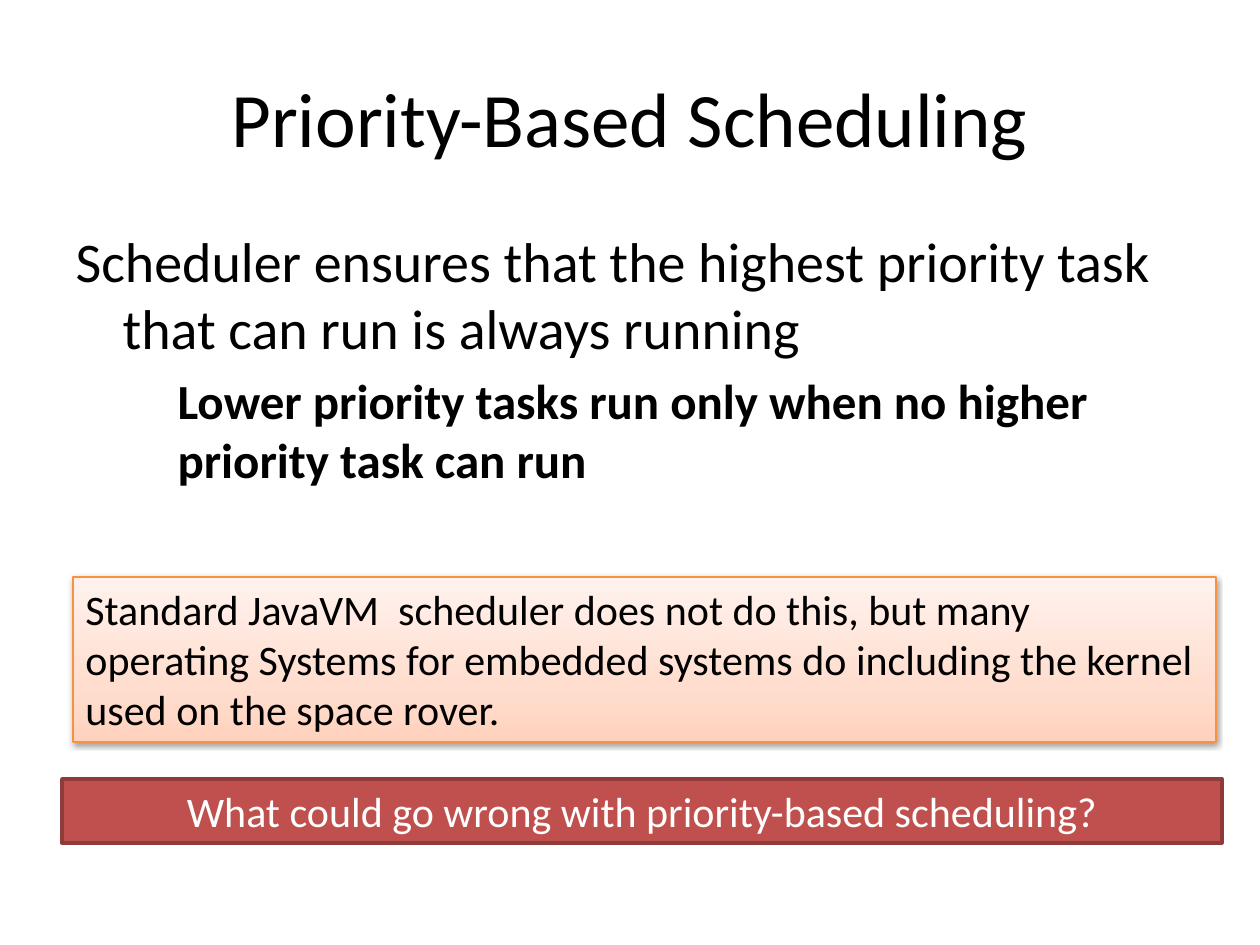
from dataclasses import dataclass

from lxml.etree import SubElement
from pptx import Presentation
from pptx.dml.color import RGBColor
from pptx.enum.shapes import MSO_SHAPE
from pptx.enum.text import MSO_ANCHOR, PP_ALIGN as Align
from pptx.oxml.ns import qn
from pptx.util import Pt

EMU_PER_PX = 914400 / 126


@dataclass(frozen=True)
class Theme:
    font: str = "Calibri"
    text: str = "000000"
    light_text: str = "FFFFFF"
    question_fill: str = "C0504D"
    question_line: str = "8E3B39"
    note_line: str = "F69240"
    note_stops: tuple = ((0, "FFD2BD"), (35, "FFDED0"), (100, "FFF2ED"))
    shadow: str = "000000"
    title_size: int = 44
    body_size: int = 32
    detail_size: int = 28
    box_size: int = 24


THEME = Theme()


def px(value):
    return round(value * EMU_PER_PX)


def rgb(value):
    return RGBColor.from_string(value)


def place(shape, left, top, width, height):
    shape.left, shape.top = px(left), px(top)
    shape.width, shape.height = px(width), px(height)


def add_text(paragraph, text, size, color=THEME.text, bold=False):
    run = paragraph.add_run()
    run.text = text
    run.font.name = THEME.font
    run.font.size = Pt(size)
    run.font.bold = bold
    run.font.color.rgb = rgb(color)


def set_hanging(paragraph, margin, indent):
    properties = paragraph._p.get_or_add_pPr()
    properties.set("marL", str(px(margin)))
    properties.set("indent", str(px(indent)))
    SubElement(properties, qn("a:buNone"))


def add_title(slide, text):
    title = slide.shapes.title
    place(title, 63, 38, 1134, 157)
    title.text_frame.vertical_anchor = MSO_ANCHOR.MIDDLE
    paragraph = title.text_frame.paragraphs[0]
    paragraph.alignment = Align.CENTER
    add_text(paragraph, text, THEME.title_size)


def add_body(slide, statement, detail):
    body = slide.placeholders[1]
    place(body, 63, 220, 1134, 624)
    frame = body.text_frame
    first = frame.paragraphs[0]
    set_hanging(first, 47, -47)
    add_text(first, statement, THEME.body_size)
    second = frame.add_paragraph()
    second.level = 1
    set_hanging(second, 102, 0)
    add_text(second, detail, THEME.detail_size, bold=True)


def add_box(slide, bounds, text, alignment, text_color, line_color, line_width):
    box = slide.shapes.add_shape(MSO_SHAPE.RECTANGLE, *map(px, bounds))
    box.shadow.inherit = False
    box.line.color.rgb = rgb(line_color)
    box.line.width = Pt(line_width)
    frame = box.text_frame
    frame.word_wrap = True
    frame.vertical_anchor = MSO_ANCHOR.TOP
    paragraph = frame.paragraphs[0]
    paragraph.alignment = alignment
    add_text(paragraph, text, THEME.box_size, text_color)
    return box


def fill_gradient(shape, stops, angle):
    shape.fill.gradient()
    shape.fill.gradient_angle = angle
    stop_list = shape._element.spPr.find(qn("a:gradFill")).find(qn("a:gsLst"))
    for stop in list(stop_list):
        stop_list.remove(stop)
    for position, color in stops:
        stop = SubElement(stop_list, qn("a:gs"), pos=str(position * 1000))
        SubElement(stop, qn("a:srgbClr"), val=color)


def add_shadow(shape, blur, distance, opacity):
    effects = shape._element.spPr.find(qn("a:effectLst"))
    shadow = SubElement(
        effects, qn("a:outerShdw"), blurRad=str(Pt(blur)), dist=str(Pt(distance)),
        dir="5400000", rotWithShape="0")
    color = SubElement(shadow, qn("a:srgbClr"), val=THEME.shadow)
    SubElement(color, qn("a:alpha"), val=str(opacity * 1000))


def add_note(slide, text):
    note = add_box(slide, (73, 577, 1143, 165), text, Align.LEFT,
                   THEME.text, THEME.note_line, 0.75)
    fill_gradient(note, THEME.note_stops, 90)
    add_shadow(note, 3.1, 1.6, 38)


def add_question(slide, text):
    question = add_box(slide, (62, 779, 1160, 64), text, Align.CENTER,
                       THEME.light_text, THEME.question_line, 2)
    question.fill.solid()
    question.fill.fore_color.rgb = rgb(THEME.question_fill)


def main():
    presentation = Presentation()
    presentation.slide_width, presentation.slide_height = px(1260), px(945)
    slide = presentation.slides.add_slide(presentation.slide_layouts[1])
    add_title(slide, "Priority-Based Scheduling")
    add_body(
        slide,
        "Scheduler ensures that the highest priority task that can run is always running",
        "Lower priority tasks run only when no higher priority task can run")
    add_note(
        slide,
        "Standard JavaVM  scheduler does not do this, but many operating Systems for "
        "embedded systems do including the kernel used on the space rover.")
    add_question(slide, "What could go wrong with priority-based scheduling?")
    presentation.save("out.pptx")


if __name__ == "__main__":
    main()
